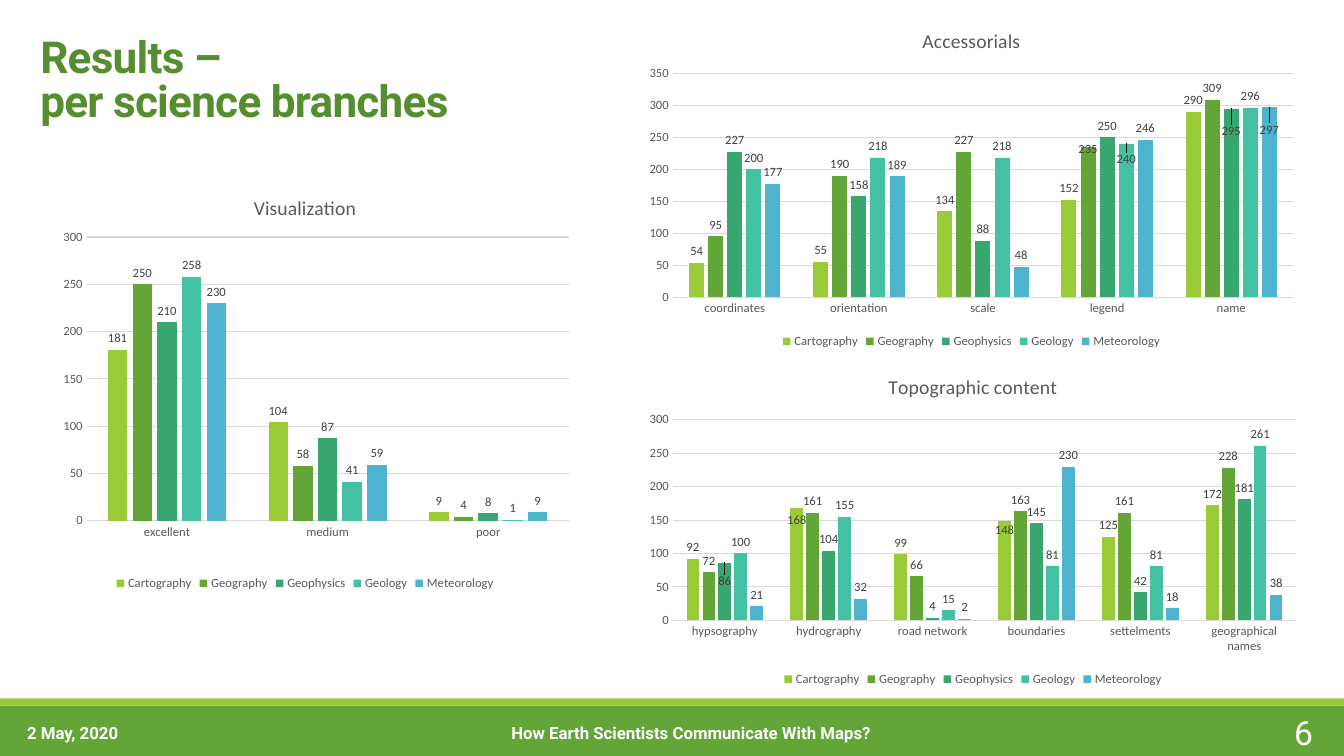
from pptx import Presentation
from pptx import util as u
from pptx.chart.data import CategoryChartData
from pptx.dml.color import RGBColor
from pptx.enum import chart as ch, shapes, text
from pptx.oxml import parse_xml
from pptx.oxml.ns import nsdecls, qn

LAYOUT = f"<c:layout {nsdecls('c')}><c:manualLayout>%s</c:manualLayout></c:layout>"
SERIES = {"Cartography": "99CB38", "Geography": "63A537", "Geophysics": "37A76F",
          "Geology": "44C1A3", "Meteorology": "4EB3CF"}


def rgb(value):
    return RGBColor.from_string(value)


def write(tf, content, size, color, font="Roboto", bold=False,
          align=text.PP_ALIGN.LEFT, anchor=text.MSO_ANCHOR.MIDDLE):
    """Fill a text frame with one formatted paragraph and return it."""
    tf.word_wrap = True
    tf.vertical_anchor = anchor
    p = tf.paragraphs[0]
    p.text = content
    p.alignment = align
    for r in p.runs:
        r.font.size, r.font.name, r.font.bold = u.Pt(size), font, bold
        r.font.color.rgb = rgb(color)
    return p


prs = Presentation()
prs.slide_width, prs.slide_height = u.Inches(13.33), u.Inches(7.5)
s = prs.slides.add_slide(prs.slide_layouts[5])

# Footer bands
for top, height, color in ((7, 0.5, "63A537"), (6.93, 0.07, "99CB38")):
    sp = s.shapes.add_shape(shapes.MSO_SHAPE.RECTANGLE, 0, u.Inches(top),
                            prs.slide_width, u.Inches(height))
    sp.shadow.inherit = False
    sp.fill.solid()
    sp.fill.fore_color.rgb = rgb(color)
    sp.line.fill.background()

# Title
title = s.shapes.title
title.left, title.top = u.Inches(0.3), u.Inches(0.27)
title.width, title.height = u.Inches(12.81), u.Inches(1.04)
p = write(title.text_frame, "Results –\vper science branches", 31.5, "558D2F",
          bold=True, anchor=text.MSO_ANCHOR.BOTTOM)
p.line_spacing = 0.85
for r in p.runs:
    r.font._element.set("spc", "-50")

# Footer texts
for content, left, top, width, height, size, bold, align in (
        ("2 May, 2020", 0.17, 7.07, 2.03, 0.4, 12, True, text.PP_ALIGN.LEFT),
        ("How Earth Scientists Communicate With Maps?", 3.93, 7.16, 5.85, 0.21,
         12, True, text.PP_ALIGN.CENTER),
        ("6", 11.69, 7.06, 1.43, 0.4, 24, False, text.PP_ALIGN.RIGHT)):
    box = s.shapes.add_textbox(u.Inches(left), u.Inches(top),
                               u.Inches(width), u.Inches(height))
    write(box.text_frame, content, size, "FFFFFF", bold=bold, align=align)

# Charts: title, place, inner plot area, categories, values by series,
# and labels moved down as (series, category): share of chart height
charts = (
    ("Visualization", (0.29, 1.76, 5.47, 4.14), (0.104, 0.143, 0.874, 0.68),
     ["excellent", "medium", "poor"],
     [(181, 104, 9), (250, 58, 4), (210, 87, 8), (258, 41, 1), (230, 59, 9)],
     {}),
    ("Accessorials", (6.31, 0.11, 6.65, 3.39), None,
     ["coordinates", "orientation", "scale", "legend", "name"],
     [(54, 55, 134, 152, 290), (95, 190, 227, 235, 309), (227, 158, 88, 250, 295),
      (200, 218, 218, 240, 296), (177, 189, 48, 246, 297)],
     {(1, 3): 0.04, (2, 4): 0.1, (3, 3): 0.08, (4, 4): 0.1}),
    ("Topographic content", (6.31, 3.55, 6.68, 3.3), None,
     ["hypsography", "hydrography", "road network", "boundaries", "settelments",
      "geographical names"],
     [(92, 168, 99, 148, 125, 172), (72, 161, 66, 163, 161, 228),
      (86, 104, 4, 145, 42, 181), (100, 155, 15, 81, 81, 261),
      (21, 32, 2, 230, 18, 38)],
     {(0, 1): 0.07, (0, 3): 0.06, (2, 0): 0.09}),
)

for name, place, plot_area, categories, values, moved in charts:
    data = CategoryChartData()
    data.categories = categories
    for series_name, vals in zip(SERIES, values):
        data.add_series(series_name, vals)
    chart = s.shapes.add_chart(ch.XL_CHART_TYPE.COLUMN_CLUSTERED,
                               *map(u.Inches, place), data).chart
    chart.font.size, chart.font.name = u.Pt(10), "Calibri"
    chart.has_title = True
    write(chart.chart_title.text_frame, name, 14, "595959", font="Calibri",
          align=text.PP_ALIGN.CENTER)
    chart.chart_title.include_in_layout = False
    chart.has_legend = True
    chart.legend.position = ch.XL_LEGEND_POSITION.BOTTOM
    chart.legend.include_in_layout = False

    cat, val = chart.category_axis, chart.value_axis
    for axis in (cat, val):
        axis.major_tick_mark = axis.minor_tick_mark = ch.XL_TICK_MARK.NONE
    val.format.line.fill.background()
    val.has_major_gridlines = True
    for line in (cat.format.line, val.major_gridlines.format.line):
        line.color.rgb, line.width = rgb("D9D9D9"), u.Pt(0.75)
    for font in (cat.tick_labels.font, val.tick_labels.font, chart.legend.font):
        font.size, font.name, font.color.rgb = u.Pt(9), "Calibri", rgb("595959")

    plot = chart.plots[0]
    plot.gap_width, plot.overlap, plot.vary_by_categories = 219, -27, False
    for series, color in zip(plot.series, SERIES.values()):
        series.format.fill.solid()
        series.format.fill.fore_color.rgb = rgb(color)
        labels = series.data_labels
        labels.show_value = True
        labels.position = ch.XL_LABEL_POSITION.OUTSIDE_END
        labels.font.size, labels.font.name = u.Pt(9), "Calibri"
        labels.font.color.rgb = rgb("404040")

    for (row, col), shift in moved.items():
        series = plot.series[row]
        label = series.points[col].data_label
        label.position = ch.XL_LABEL_POSITION.OUTSIDE_END
        label.font.size, label.font.name = u.Pt(9), "Calibri"
        label.font.color.rgb = rgb("404040")
        idx = series.data_labels._element.xpath(f'c:dLbl/c:idx[@val="{col}"]')[0]
        idx.addnext(parse_xml(LAYOUT % f'<c:x val="0"/><c:y val="{shift}"/>'))

    if plot_area:
        area = chart._chartSpace.chart.plotArea
        for old in area.findall(qn("c:layout")):
            area.remove(old)
        parts = '<c:layoutTarget val="inner"/><c:xMode val="edge"/><c:yMode val="edge"/>'
        parts += "".join(f'<c:{k} val="{v}"/>' for k, v in zip("xywh", plot_area))
        area.insert(0, parse_xml(LAYOUT % parts))

prs.save("out.pptx")
